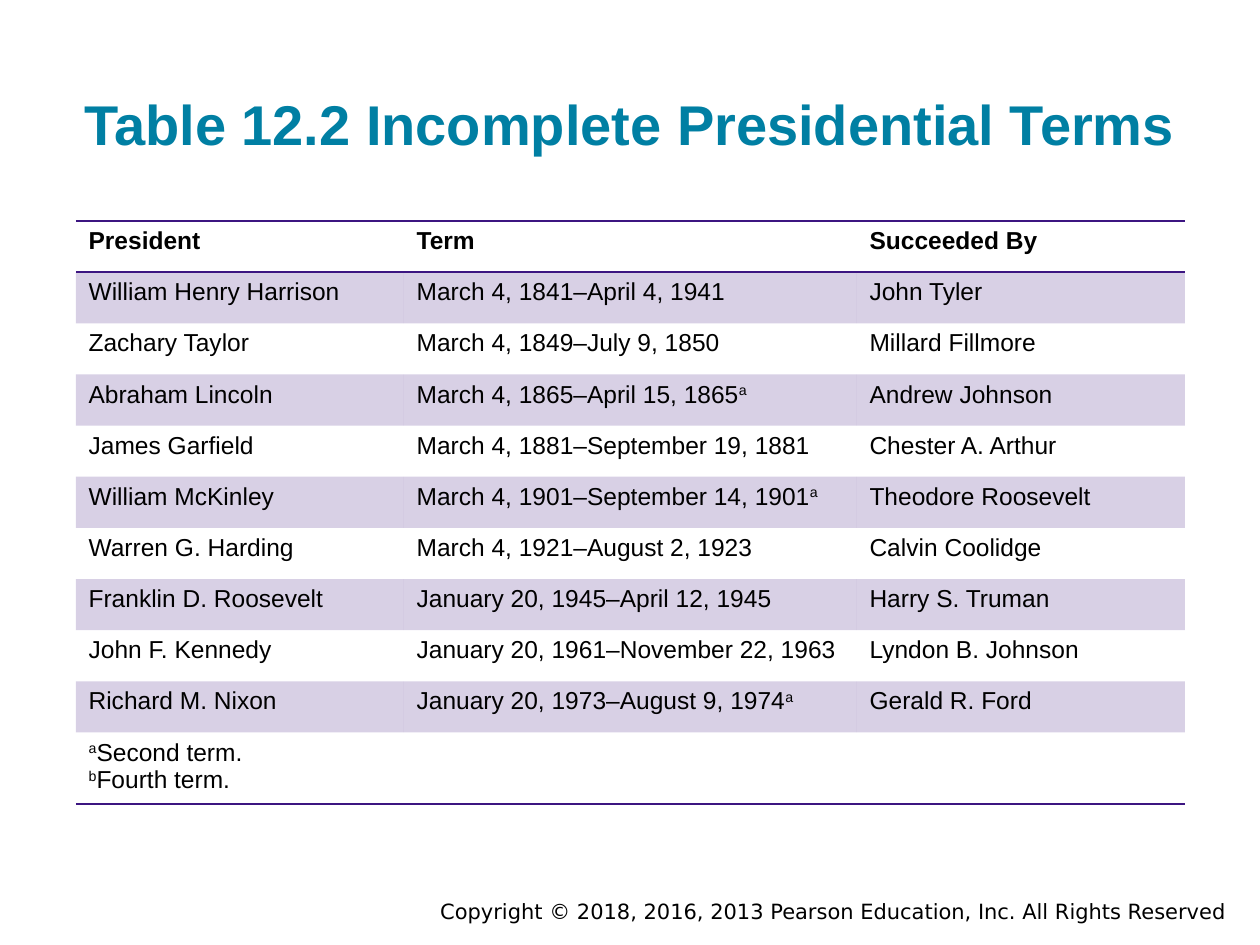
from lxml.etree import SubElement as Sub
from pptx import Presentation
from pptx.dml.color import RGBColor as Rgb
from pptx.enum.text import MSO_ANCHOR as Anchor, PP_ALIGN as Align
from pptx.oxml.ns import qn
from pptx.util import Emu, Pt

HUES = {"title": "007FA3", "rule": "3C1581", "text": "000000"}
TITLE = "Table 12.2 Incomplete Presidential Terms"
RIGHTS = "Copyright © 2018, 2016, 2013 Pearson Education, Inc. All Rights Reserved"
COLS = [328, 453, 328]
ROWS = [
    ("President", "Term", "Succeeded By"),
    ("William Henry Harrison", "March 4, 1841–April 4, 1941", "John Tyler"),
    ("Zachary Taylor", "March 4, 1849–July 9, 1850", "Millard Fillmore"),
    ("Abraham Lincoln", "March 4, 1865–April 15, 1865^a", "Andrew Johnson"),
    ("James Garfield", "March 4, 1881–September 19, 1881", "Chester A. Arthur"),
    ("William McKinley", "March 4, 1901–September 14, 1901^a", "Theodore Roosevelt"),
    ("Warren G. Harding", "March 4, 1921–August 2, 1923", "Calvin Coolidge"),
    ("Franklin D. Roosevelt", "January 20, 1945–April 12, 1945", "Harry S. Truman"),
    ("John F. Kennedy", "January 20, 1961–November 22, 1963", "Lyndon B. Johnson"),
    ("Richard M. Nixon", "January 20, 1973–August 9, 1974^a", "Gerald R. Ford"),
    ("^aSecond term.\n^bFourth term.", "", ""),
]


def px(n):
    return Emu(round(n * 914400 / 126))


def style(para, size, hue="text", bold=False, face="Arial"):
    font = para.font
    font.name, font.size, font.bold = face, Pt(size), bold
    font.color.rgb = Rgb.from_string(HUES[hue])


def write(para, text):
    plain, *marks = text.split("^")
    if plain:
        para.add_run().text = plain
    for mark in marks:
        note = para.add_run()
        note.text = mark[0]
        note._r.get_or_add_rPr().set("baseline", "30000")
        if mark[1:]:
            para.add_run().text = mark[1:]


def label(slide, box, text, align, anchor, pad, **look):
    frame = slide.shapes.add_textbox(*map(px, box)).text_frame
    frame.word_wrap = True
    frame.vertical_anchor = anchor
    frame.margin_left = frame.margin_right = Pt(7.2)
    frame.margin_top = frame.margin_bottom = Pt(pad)
    para = frame.paragraphs[0]
    para.alignment = align
    write(para, text)
    style(para, **look)


def edge(cell, side, shown):
    line = Sub(cell._tc.get_or_add_tcPr(), qn("a:ln" + side), w=str(Pt(1)))
    if shown:
        fill = Sub(line, qn("a:solidFill"))
        Sub(fill, qn("a:srgbClr"), val=HUES["rule"])
    else:
        Sub(line, qn("a:noFill"))


def shade(cell, tint):
    if not tint:
        cell.fill.background()
        return
    cell.fill.solid()
    cell.fill.fore_color.rgb = Rgb.from_string(HUES["rule"])
    hue = cell._tc.tcPr.find(".//" + qn("a:solidFill") + "[last()]/" + qn("a:srgbClr"))
    for fill in cell._tc.tcPr.findall(qn("a:solidFill")):
        hue = fill[0]
    Sub(hue, qn("a:alpha"), val="20000")


def grid(slide, box):
    table = slide.shapes.add_table(len(ROWS), len(COLS), *map(px, box)).table
    table.first_row = table.horz_banding = False
    for col, wide in zip(table.columns, COLS):
        col.width = px(wide)
    last = len(ROWS) - 1
    for r, texts in enumerate(ROWS):
        table.rows[r].height = px(box[3] / len(ROWS))
        for c, text in enumerate(texts):
            cell = table.cell(r, c)
            for side in "LR":
                edge(cell, side, False)
            edge(cell, "T", r in (0, 1))
            edge(cell, "B", r in (0, last))
            shade(cell, r % 2 == 1)
            for i, part in enumerate(text.split("\n")):
                frame = cell.text_frame
                para = frame.add_paragraph() if i else frame.paragraphs[0]
                write(para, part)
                style(para, 14, bold=r == 0)


def main():
    deck = Presentation()
    deck.slide_width, deck.slide_height = px(1260), px(945)
    slide = deck.slides.add_slide(deck.slide_layouts[6])
    label(slide, (252, 892, 987, 38), RIGHTS, Align.RIGHT, Anchor.TOP, 3.6,
          size=12, face="DejaVu Sans")
    label(slide, (63, 30, 1134, 139), TITLE, Align.CENTER, Anchor.BOTTOM, 7.2,
          size=32, hue="title", bold=True)
    grid(slide, (76, 221, 1109, 563))
    deck.save("out.pptx")


if __name__ == "__main__":
    main()
